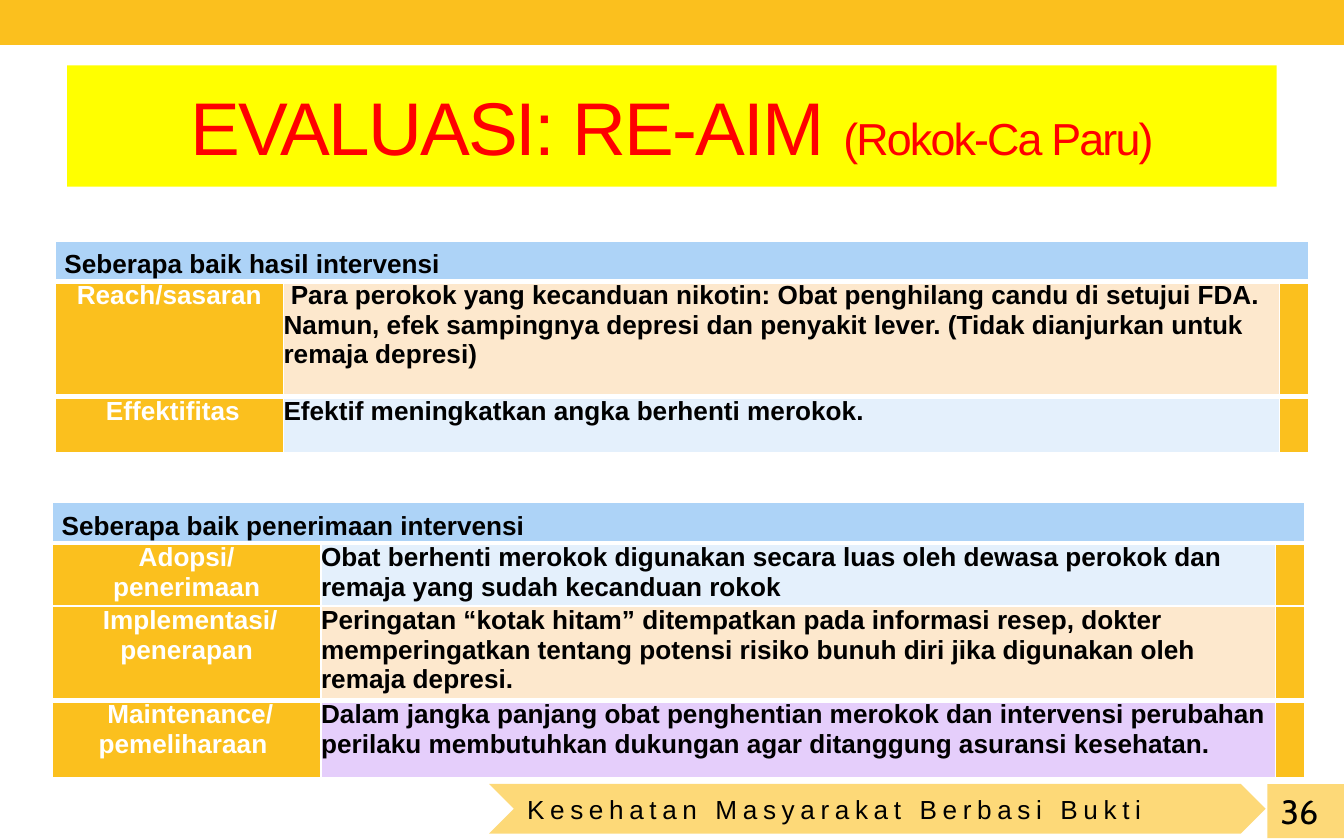
import pptx
import pptx.dml.color
import pptx.enum.shapes
import pptx.enum.text
import pptx.oxml.ns
import pptx.util
from lxml import etree

Pt = pptx.util.Pt
SHAPE = pptx.enum.shapes.MSO_SHAPE
ALIGN = pptx.enum.text.PP_ALIGN
ANCHOR = pptx.enum.text.MSO_ANCHOR
COLORS = {
    "amber": "FBC01E", "pale amber": "FDD978", "yellow": "FFFF00",
    "red": "FF0000", "black": "000000", "white": "FFFFFF",
    "header": "ADD3F7", "peach": "FDE8CD", "sky": "E4F0FC", "lilac": "E5CEFB",
}
THIN, THICK = 1, 3

RESULT_ROWS = [
    ("\N{NO-BREAK SPACE}Reach/sasaran ",
     " Para perokok yang kecanduan nikotin: Obat penghilang candu di setujui FDA. "
     "Namun, efek sampingnya depresi dan penyakit lever. "
     "(Tidak dianjurkan untuk remaja depresi)", "peach"),
    ("\N{NO-BREAK SPACE}Effektifitas",
     "Efektif meningkatkan angka berhenti merokok.", "sky"),
]
ACCEPTANCE_ROWS = [
    ("Adopsi/\npenerimaan",
     "Obat berhenti merokok digunakan secara luas oleh dewasa perokok dan "
     "remaja yang sudah kecanduan rokok", "sky"),
    ("\N{NO-BREAK SPACE}Implementasi/\npenerapan",
     "Peringatan “kotak hitam” ditempatkan pada informasi resep, dokter "
     "memperingatkan tentang potensi risiko bunuh diri jika digunakan oleh "
     "remaja depresi.", "peach"),
    ("\N{NO-BREAK SPACE}Maintenance/ pemeliharaan ",
     "Dalam jangka panjang obat penghentian merokok dan intervensi perubahan "
     "perilaku membutuhkan dukungan agar ditanggung asuransi kesehatan.", "lilac"),
]


def rgb(name):
    return pptx.dml.color.RGBColor.from_string(COLORS[name])


def add_span(para, text, size, color, font="Arial", bold=False, spacing=0):
    """Add one run; spacing is the gap between letters in points."""
    span = para.add_run()
    span.text = text
    span.font.size = Pt(size)
    span.font.name = font
    span.font.bold = bold
    span.font.color.rgb = rgb(color)
    if spacing:
        span.font._element.set("spc", str(spacing * 100))


def add_block(page, kind, left, top, width, height, color,
              align=ALIGN.LEFT, anchor=ANCHOR.MIDDLE):
    """Add a filled shape and return its first paragraph."""
    block = page.shapes.add_shape(kind, Pt(left), Pt(top), Pt(width), Pt(height))
    block.shadow.inherit = False
    block.fill.solid()
    block.fill.fore_color.rgb = rgb(color)
    block.line.fill.background()
    block.text_frame.word_wrap = True
    block.text_frame.vertical_anchor = anchor
    para = block.text_frame.paragraphs[0]
    para.alignment = align
    return para


def style_cell(cell, color, top=THIN, bottom=THIN):
    """Set the fill, the white borders and zero margins."""
    properties = cell._tc.get_or_add_tcPr()
    for side, width in (("L", THIN), ("R", THIN), ("T", top), ("B", bottom)):
        line = etree.SubElement(properties, pptx.oxml.ns.qn("a:ln" + side),
                                w=str(Pt(width)))
        fill = etree.SubElement(line, pptx.oxml.ns.qn("a:solidFill"))
        etree.SubElement(fill, pptx.oxml.ns.qn("a:srgbClr"), val=COLORS["white"])
    cell.fill.solid()
    cell.fill.fore_color.rgb = rgb(color)
    cell.margin_left = cell.margin_right = 0
    cell.margin_top = cell.margin_bottom = 0


def write_cell(cell, text, color, align=ALIGN.LEFT):
    para = cell.text_frame.paragraphs[0]
    para.alignment = align
    for index, line in enumerate(text.split("\n")):
        if index:
            para.add_line_break()
        add_span(para, line, 14, color, bold=True)


def add_aspect_table(page, left, top, widths, heights, heading, rows):
    """Add a table with a merged heading row and an empty amber end column."""
    frame = page.shapes.add_table(len(heights), len(widths), Pt(left), Pt(top),
                                  Pt(sum(widths)), Pt(sum(heights)))
    table = frame.table
    for column, width in zip(table.columns, widths):
        column.width = Pt(width)
    for row, height in zip(table.rows, heights):
        row.height = Pt(height)

    for cell in table.rows[0].cells:
        style_cell(cell, "header", bottom=THICK)
    header = table.cell(0, 0)
    header.merge(table.cell(0, len(widths) - 1))
    header.margin_left = header.margin_top = Pt(5)
    write_cell(header, heading, "black")

    last = len(rows)
    for number, (label, detail, tint) in enumerate(rows, start=1):
        above = THICK if number in (1, last) else THIN
        below = THICK if number == last - 1 else THIN
        cells = table.rows[number].cells
        for cell, color in zip(cells, ("amber", tint, "amber")):
            style_cell(cell, color, above, below)
        write_cell(cells[0], label, "white", ALIGN.CENTER)
        write_cell(cells[1], detail, "black")


def main():
    deck = pptx.Presentation()
    deck.slide_width, deck.slide_height = Pt(720), Pt(450)
    page = deck.slides.add_slide(deck.slide_layouts[6])

    add_block(page, SHAPE.RECTANGLE, 0, 0, 720, 24, "amber")
    number = add_block(page, SHAPE.RECTANGLE, 679, 420, 41, 29, "pale amber",
                       anchor=ANCHOR.TOP)
    add_span(number, "36", 18, "black", font="Cabin")
    footer = add_block(page, SHAPE.CHEVRON, 262, 420, 416, 26.6, "pale amber",
                       align=ALIGN.JUSTIFY)
    add_span(footer, "Kesehatan Masyarakat Berbasi Bukti", 14, "black", spacing=3)
    title = add_block(page, SHAPE.RECTANGLE, 36, 35, 648, 65, "yellow",
                      align=ALIGN.CENTER)
    add_span(title, "EVALUASI: RE-AIM ", 40, "red", spacing=-1)
    add_span(title, "(Rokok-Ca Paru)", 24, "red", spacing=-1)

    add_aspect_table(page, 29.5, 129, (122.4, 533.5, 15.8), (21.6, 62, 30.2),
                     "Seberapa baik hasil intervensi", RESULT_ROWS)
    add_aspect_table(page, 28, 269.3, (144, 511.2, 15.8), (21.6, 33.8, 50.4, 41.8),
                     "Seberapa baik penerimaan intervensi", ACCEPTANCE_ROWS)
    deck.save("out.pptx")


if __name__ == "__main__":
    main()
